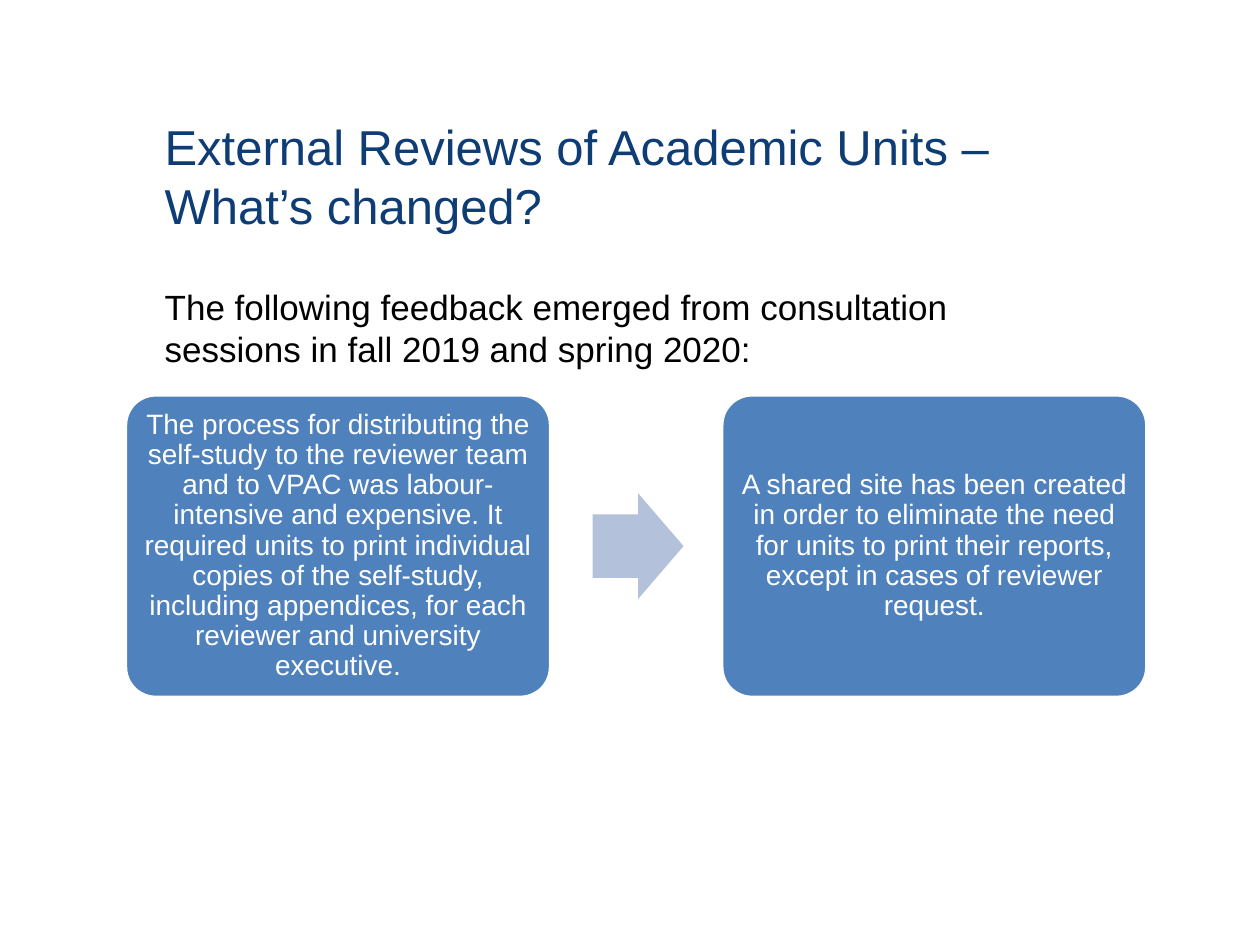
from pptx import Presentation
from pptx import util as u
from pptx.dml.color import RGBColor
from pptx.enum import shapes, text

HUES = {"title": "0E3C75", "body": "000000", "card": "4F81BD",
        "arrow": "B3C1DB", "white": "FFFFFF"}
FONT = "Arial"


class Deck:
    def __init__(self, wide, high):
        self.prs = Presentation()
        self.prs.slide_width, self.prs.slide_height = u.Cm(wide), u.Cm(high)
        self.slide = self.prs.slides.add_slide(self.prs.slide_layouts[6])

    def hue(self, name):
        return RGBColor.from_string(HUES[name])

    def fill_text(self, shape, words, size, hue, anchor):
        frame = shape.text_frame
        frame.word_wrap = True
        frame.vertical_anchor = anchor
        para = frame.paragraphs[0]
        para.text = words
        para.font.name, para.font.size = FONT, u.Pt(size)
        para.font.color.rgb = self.hue(hue)
        return para

    def label(self, box, words, size, hue, anchor=text.MSO_ANCHOR.TOP):
        shape = self.slide.shapes.add_textbox(*map(u.Cm, box))
        self.fill_text(shape, words, size, hue, anchor)

    def block(self, kind, box, hue, *ratios):
        shape = self.slide.shapes.add_shape(kind, *map(u.Cm, box))
        shape.shadow.inherit = False
        shape.fill.solid()
        shape.fill.fore_color.rgb = self.hue(hue)
        shape.line.fill.background()
        for i, ratio in enumerate(ratios):
            shape.adjustments[i] = ratio
        return shape

    def card(self, box, words):
        shape = self.block(shapes.MSO_SHAPE.ROUNDED_RECTANGLE, box, "card", 0.1)
        shape.line.color.rgb = self.hue("white")
        shape.line.width = u.Pt(2)
        frame = shape.text_frame
        frame.margin_left = frame.margin_right = u.Cm(0.18)
        frame.margin_top = frame.margin_bottom = u.Cm(0.18)
        para = self.fill_text(shape, words, 16, "white", text.MSO_ANCHOR.MIDDLE)
        para.alignment = text.PP_ALIGN.CENTER
        para.line_spacing = 0.9

    def arrow(self, box):
        self.block(shapes.MSO_SHAPE.RIGHT_ARROW, box, "arrow", 0.6, 0.5)


def main():
    deck = Deck(25.4, 19.05)

    # Heading and lead-in
    left, wide = 3.07, 17.4
    deck.label((left, 1.96, wide, 3.17),
               "External Reviews of Academic Units – What’s changed?",
               28, "title", text.MSO_ANCHOR.MIDDLE)
    deck.label((left, 5.64, wide, 11.53),
               "The following feedback emerged from consultation sessions "
               "in fall 2019 and spring 2020:", 20, "body")

    # Feedback and the change it led to
    notes = [
        "The process for distributing the self-study to the reviewer team and "
        "to VPAC was labour-intensive and expensive. It required units to "
        "print individual copies of the self-study, including appendices, "
        "for each reviewer and university executive.",
        "A shared site has been created in order to eliminate the need for "
        "units to print their reports, except in cases of reviewer request.",
    ]
    start, top, step, size = 2.53, 7.96, 12.02, (8.57, 6.1)
    for i, note in enumerate(notes):
        deck.card((start + i * step, top, *size), note)

    # Arrow centred on the height of the cards
    high = 2.13
    deck.arrow((11.95, top + (size[1] - high) / 2, 1.83, high))

    deck.prs.save("out.pptx")


if __name__ == "__main__":
    main()
